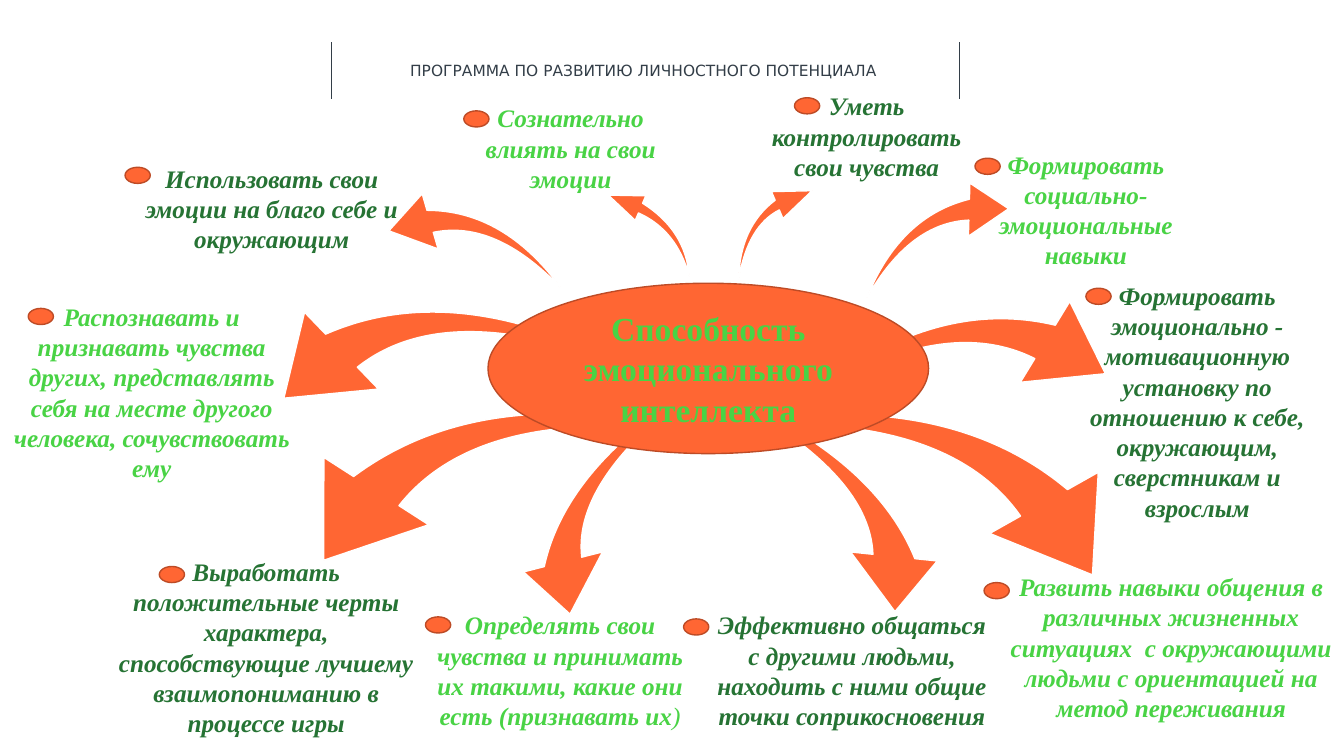
from dataclasses import dataclass
from itertools import cycle

from lxml.etree import SubElement
from pptx import Presentation
from pptx.dml.color import RGBColor
from pptx.enum.shapes import MSO_CONNECTOR, MSO_SHAPE
from pptx.enum.text import MSO_ANCHOR, MSO_AUTO_SIZE, PP_ALIGN
from pptx.oxml import parse_xml
from pptx.oxml.ns import nsdecls, qn
from pptx.util import Inches, Pt

COLUMNS, ROWS = 13.33, 7.5
ORANGE, RUST, WHITE, SLATE = "FF6633", "BD4B26", "FFFFFF", "333E48"
DARK_GREEN, LIGHT_GREEN, OUTLINE_GREEN = "267334", "49D345", "194D22"
SERIF, SANS = "Times New Roman", "DejaVu Sans"
CENTRE = (4.84, 2.81, 4.37, 1.69)
BEND = (0.163, 0.314)


@dataclass
class Goal:
    wording: tuple
    left: float
    top: float
    width: float
    lines: int
    marker: tuple
    arrow: tuple
    turn: float
    bend: tuple = BEND


GOALS = [
    Goal(("Уметь контролировать свои чувства",),
         7.52, 0.85, 2.15, 3, (7.88, 0.97), (7.2, 1.91, 0.95, 0.74), 343.3, (0.141, 0.511)),
    Goal(("Формировать социально-эмоциональные навыки",),
         9.58, 1.43, 2.38, 4, (9.67, 1.57), (8.68, 1.78, 1.27, 1.27), 8),
    Goal(("Формировать эмоционально - мотивационную установку по отношению "
          "к себе, окружающим, сверстникам и взрослым",),
         10.58, 2.73, 2.59, 8, (10.77, 2.86), (8.49, 2.51, 2.19, 2.37), 37.9),
    Goal(("Развить навыки общения в различных жизненных ситуациях  "
          "с окружающими людьми с ориентацией на метод переживания",),
         9.89, 5.62, 3.45, 5, (9.76, 5.78), (7.81, 3.25, 2.79, 3.26), 67),
    Goal(("Эффективно общаться с другими людьми, находить с ними общие "
          "точки соприкосновения",),
         7.01, 6, 2.88, 4, (6.78, 6.14), (7.23, 3.72, 1.77, 2.55), 102.4),
    Goal(("Определять свои чувства и принимать их такими, какие они есть "
          "(признавать их", ")"),
         4.21, 6, 2.69, 4, (4.22, 6.12), (5.34, 3.82, 1.69, 2.34), 249.4),
    Goal(("Выработать положительные черты характера, способствующие лучшему "
          "взаимопониманию в процессе игры",),
         1.04, 5.47, 3.2, 6, (1.58, 5.62), (3.49, 3.2, 2.79, 3.26), 296.3),
    Goal(("Распознавать и признавать чувства других, представлять себя "
          "на месте другого человека, сочувствовать ему",),
         0, 2.94, 3.01, 6, (0.28, 3.06), (3.15, 2.28, 2.4, 2.77), 309.7),
    Goal(("Использовать свои эмоции на благо себе и окружающим",),
         1.24, 1.57, 2.91, 3, (1.24, 1.66), (3.99, 1.78, 1.36, 1.39), 337.5),
    Goal(("Сознательно влиять на свои эмоции",),
         4.63, 0.97, 2.06, 3, (4.6, 1.1), (5.95, 1.97, 1, 0.64), 16.7, (0.163, 0.544)),
]


def color(value):
    return RGBColor.from_string(value)


def cells(box, left, top, width, height):
    column, row = box[2] / COLUMNS, box[3] / ROWS
    return [int(length) for length in (
        box[0] + left * column, box[1] + top * row, width * column, height * row)]


def write(frame, wording, size, ink, font=SERIF, bold=False, italic=False,
          align=PP_ALIGN.LEFT, anchor=MSO_ANCHOR.TOP, outline=None, grow=True):
    frame.word_wrap = True
    frame.vertical_anchor = anchor
    if grow:
        frame.auto_size = MSO_AUTO_SIZE.SHAPE_TO_FIT_TEXT
    paragraph = frame.paragraphs[0]
    paragraph.alignment = align
    for index, words in enumerate(wording):
        run = paragraph.add_run()
        run.text = words
        run.font.size = Pt(size)
        run.font.name = font
        run.font.bold = bold and index == 0
        run.font.italic = italic
        run.font.color.rgb = color(ink)
        if outline:
            run.font._element.insert(0, parse_xml(
                f'<a:ln {nsdecls("a")} w="{Pt(0.75)}"><a:solidFill>'
                f'<a:srgbClr val="{outline}"/></a:solidFill></a:ln>'))


def add_figure(slide, preset, place, edge):
    figure = slide.shapes.add_shape(preset, *place)
    figure.shadow.inherit = False
    figure.fill.solid()
    figure.fill.fore_color.rgb = color(ORANGE)
    figure.line.color.rgb = color(edge)
    figure.line.width = Pt(1)
    return figure


def add_header(slide, box):
    for column in (3.29, 9.52):
        left, top, _, height = cells(box, column, 0.42, 0, 0.56)
        rule = slide.shapes.add_connector(
            MSO_CONNECTOR.STRAIGHT, left, top, left, top + height)
        rule.line.color.rgb = color(SLATE)
        rule.line.width = Pt(0.5)
        SubElement(rule._element.spPr, qn("a:effectLst"))
    programme = slide.shapes.add_textbox(*cells(box, 3.97, 0.56, 4.87, 0.29))
    write(programme.text_frame, ("ПРОГРАММА ПО РАЗВИТИЮ ЛИЧНОСТНОГО ПОТЕНЦИАЛА",),
          11, SLATE, font=SANS)


def add_arrow(slide, box, goal):
    arrow = add_figure(slide, MSO_SHAPE.SWOOSH_ARROW, cells(box, *goal.arrow), WHITE)
    arrow.rotation = goal.turn
    for index, share in enumerate(goal.bend):
        arrow.adjustments[index] = share
    if goal.arrow[0] + goal.arrow[2] / 2 < CENTRE[0] + CENTRE[2] / 2:
        arrow._element.spPr.find(qn("a:xfrm")).set("flipH", "1")


def add_ability(slide, box):
    ability = add_figure(slide, MSO_SHAPE.OVAL, cells(box, *CENTRE), RUST)
    write(ability.text_frame, ("Способность эмоционального интеллекта",), 24, LIGHT_GREEN,
          bold=True, align=PP_ALIGN.CENTER, anchor=MSO_ANCHOR.MIDDLE,
          outline=OUTLINE_GREEN, grow=False)


def add_goal(slide, box, goal, ink):
    height = 0.1 + 0.303 * goal.lines
    label = slide.shapes.add_textbox(*cells(box, goal.left, goal.top, goal.width, height))
    write(label.text_frame, goal.wording, 18, ink, bold=True, italic=True,
          align=PP_ALIGN.CENTER)
    add_figure(slide, MSO_SHAPE.FLOWCHART_CONNECTOR,
               cells(box, *goal.marker, 0.25, 0.16), RUST)


def main():
    deck = Presentation()
    deck.slide_width, deck.slide_height = Inches(COLUMNS), Inches(ROWS)
    slide = deck.slides.add_slide(deck.slide_layouts[6])
    box = (0, 0, deck.slide_width, deck.slide_height)
    add_header(slide, box)
    for goal in GOALS:
        add_arrow(slide, box, goal)
    add_ability(slide, box)
    for goal, ink in zip(GOALS, cycle((DARK_GREEN, LIGHT_GREEN))):
        add_goal(slide, box, goal, ink)
    deck.save("out.pptx")


if __name__ == "__main__":
    main()
